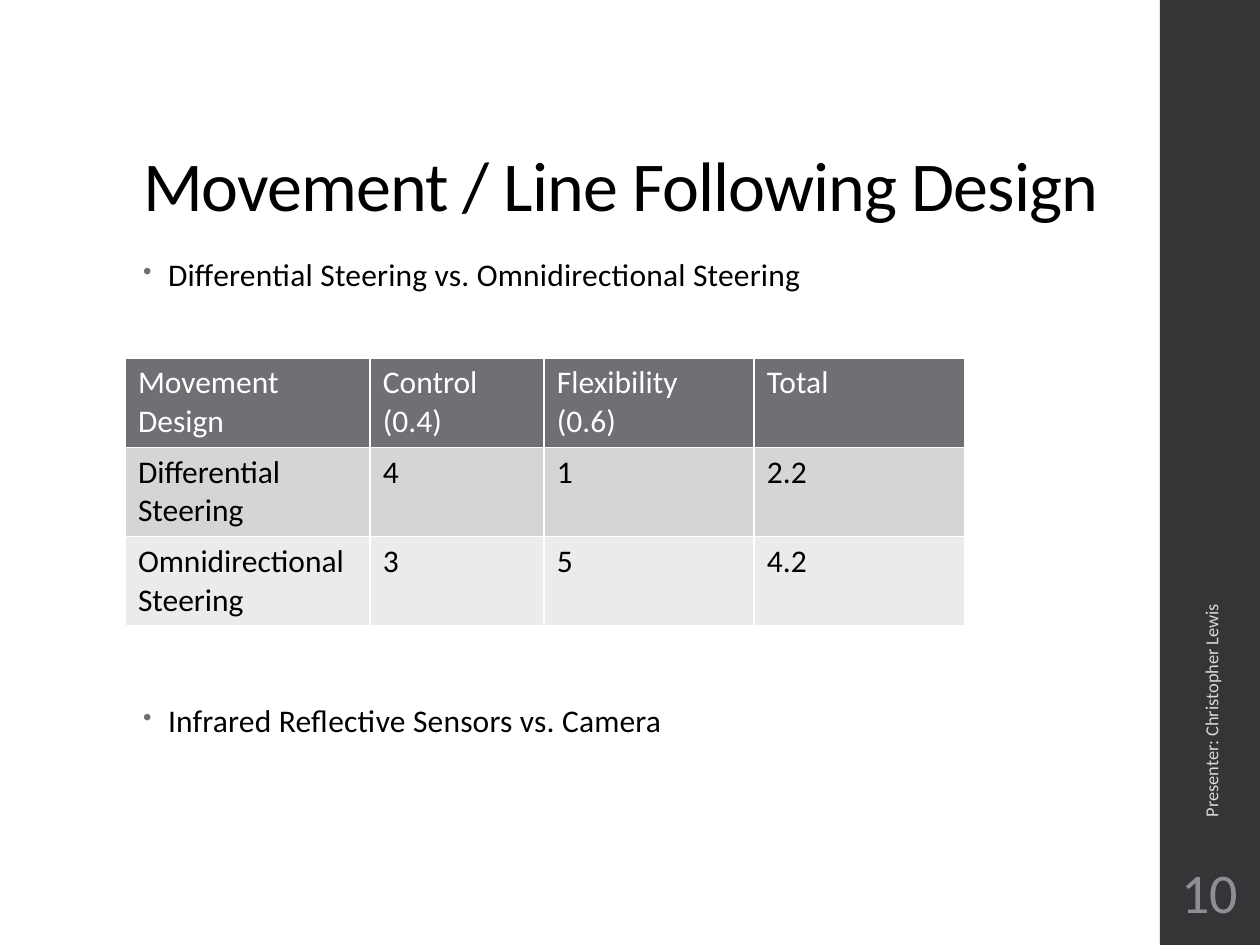
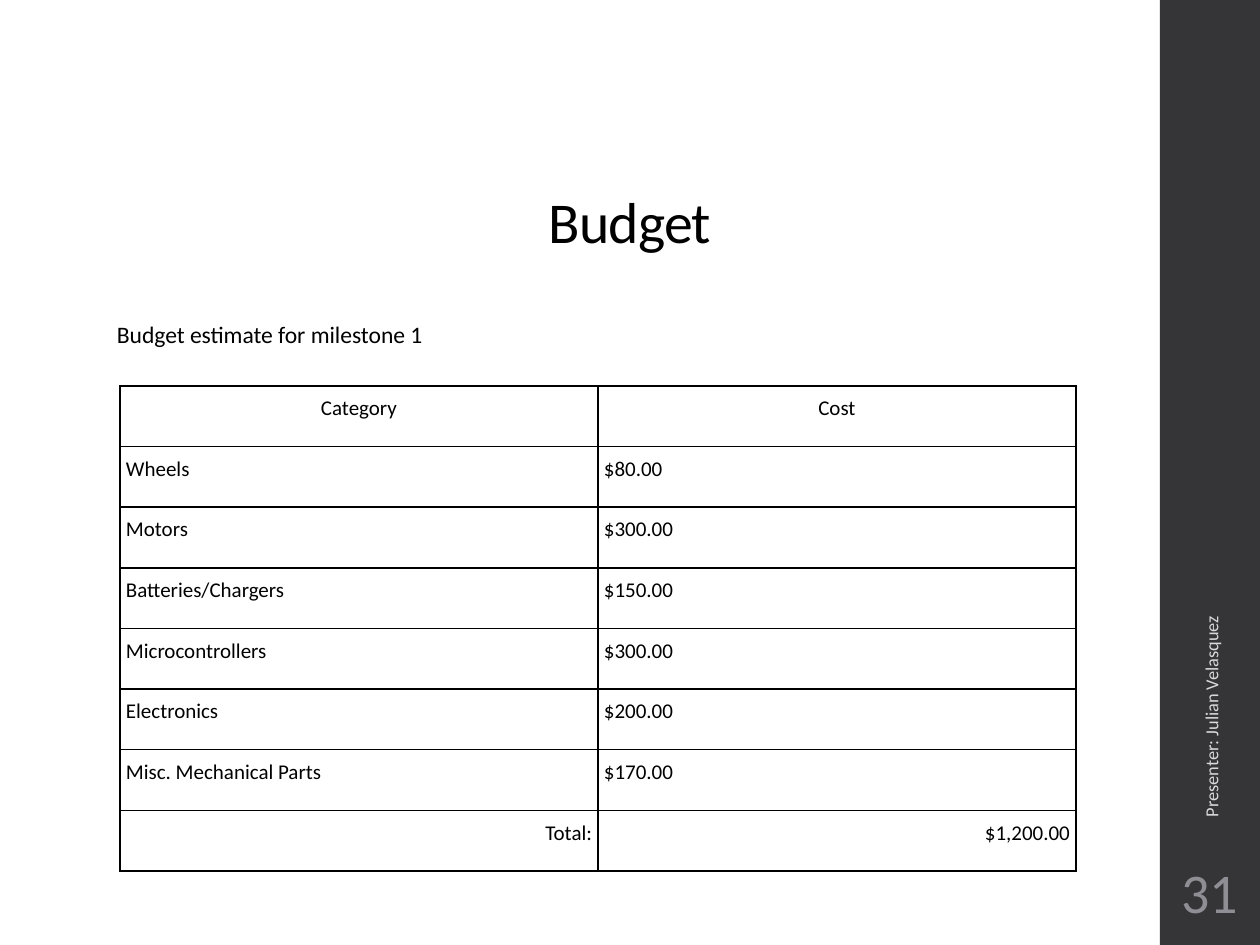
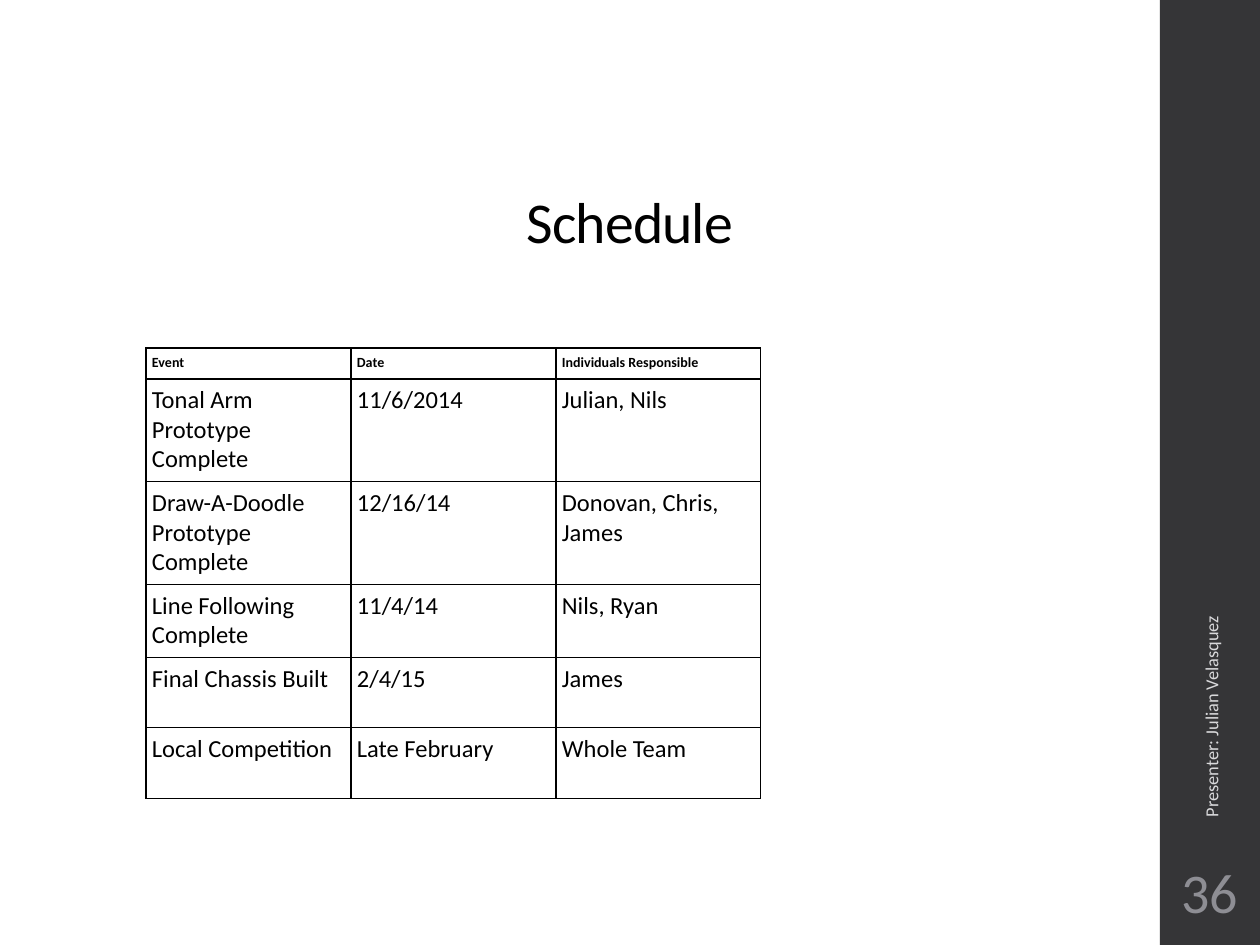
from lxml import etree
from pptx import Presentation
from pptx.dml.color import RGBColor
from pptx.enum import shapes, text
from pptx.oxml import ns
from pptx.util import Pt

SCALE = 914400 / 126
FONT = "Calibri"
BLACK = RGBColor(0x00, 0x00, 0x00)
WHITE = RGBColor(0xFF, 0xFF, 0xFF)
BAND = RGBColor(0x35, 0x35, 0x37)
GRAY = RGBColor(0x6F, 0x6F, 0x74)
DARK = RGBColor(0xD5, 0xD5, 0xD6)
LIGHT = RGBColor(0xEB, 0xEB, 0xEB)
PALE = RGBColor(0xD9, 0xD9, 0xDB)
NUMBER = RGBColor(0x8E, 0x8E, 0x94)
LEFT, CENTER, RIGHT = text.PP_ALIGN.LEFT, text.PP_ALIGN.CENTER, text.PP_ALIGN.RIGHT
TOP, MIDDLE, BOTTOM = text.MSO_ANCHOR.TOP, text.MSO_ANCHOR.MIDDLE, text.MSO_ANCHOR.BOTTOM


def px(n):
    return round(n * SCALE)


def inset(item, pads):
    item.margin_left, item.margin_top, item.margin_right, item.margin_bottom = map(px, pads)


def style(para, size, color, align=LEFT, line=None, bold=False, track=0):
    para.alignment = align
    para.line_spacing = line
    for run in para.runs:
        font = run.font
        font.name, font.size, font.bold = FONT, Pt(size), bold
        font.color.rgb = color
        if track:
            run._r.get_or_add_rPr().set("spc", str(track))


def write(slide, box, words, size, color, anchor=TOP, pads=(13, 6, 13, 6), **look):
    shape = slide.shapes.add_textbox(*map(px, box))
    frame = shape.text_frame
    frame.word_wrap = True
    frame.vertical_anchor = anchor
    inset(frame, pads)
    frame.text = words
    for para in frame.paragraphs:
        style(para, size, color, **look)
    return shape


def head(slide, box, words, size, anchor=MIDDLE, align=CENTER):
    write(slide, box, words, size, BLACK, anchor, pads=(9, 6, 9, 6) if align == CENTER else (13, 6, 13, 6),
          align=align, line=0.9, track=-50)


def side(slide, box, name, page):
    x, y, w, h = box
    band = slide.shapes.add_shape(shapes.MSO_SHAPE.RECTANGLE, *map(px, box))
    band.shadow.inherit = False
    band.fill.solid()
    band.fill.fore_color.rgb = BAND
    band.line.fill.background()
    foot = write(slide, (x - 196, y + 564, 494, 38), f"Presenter: {name}", 10.5, PALE, MIDDLE)
    foot.rotation = 270
    write(slide, (x + 3, y + 850, 94, 82), str(page), 32, NUMBER, MIDDLE,
          pads=(4, 6, 4, 6), align=CENTER)


def points(slide, box, items, gaps):
    shape = write(slide, box, "\n".join(items), 18, BLACK, line=0.95, track=10)
    for para, gap in zip(shape.text_frame.paragraphs, gaps):
        para.space_before, para.space_after = Pt(gap), Pt(2)
        props = para._p.get_or_add_pPr()
        props.set("marL", str(px(25)))
        props.set("indent", str(px(-25)))
        tint = etree.SubElement(props, ns.qn("a:buClr"))
        etree.SubElement(tint, ns.qn("a:srgbClr"), val=str(GRAY))
        etree.SubElement(props, ns.qn("a:buSzPct"), val="80000")
        etree.SubElement(props, ns.qn("a:buChar"), char="•")


def edge(cell, color, width):
    props = cell._tc.get_or_add_tcPr()
    for name in ("lnL", "lnR", "lnT", "lnB"):
        line = etree.SubElement(props, ns.qn(f"a:{name}"), w=str(Pt(width)))
        fill = etree.SubElement(line, ns.qn("a:solidFill"))
        etree.SubElement(fill, ns.qn("a:srgbClr"), val=str(color))


def grid(slide, box, data, look, rule, width, pads=(6, 6, 6, 6), cols=(), rows=()):
    table = slide.shapes.add_table(len(data), len(data[0]), *map(px, box)).table
    table.first_row = table.horz_banding = False
    for col, size in zip(table.columns, cols):
        col.width = px(size)
    for row, size in zip(table.rows, rows):
        row.height = px(size)
    for i, line in enumerate(data):
        fill, form = look(i)
        for j, words in enumerate(line):
            cell = table.cell(i, j)
            cell.text = words
            inset(cell, pads)
            edge(cell, rule, width)
            if fill is None:
                cell.fill.background()
            else:
                cell.fill.solid()
                cell.fill.fore_color.rgb = fill
            style(cell.text_frame.paragraphs[0], **form)


def design(slide, box):
    x, y, w, h = box
    head(slide, (x + 130, y + 50, 1002, 183), "Movement / Line Following Design", 40, BOTTOM, LEFT)
    points(slide, (x + 130, y + 252, 888, 600),
           ["Differential Steering vs. Omnidirectional Steering",
            "Infrared Reflective Sensors vs. Camera"], (14, 232))
    data = [("Movement Design", "Control (0.4)", "Flexibility (0.6)", "Total"),
            ("Differential Steering", "4", "1", "2.2"),
            ("Omnidirectional Steering", "3", "5", "4.2")]

    def look(i):
        return (GRAY, DARK, LIGHT)[i], dict(size=18, color=BLACK if i else WHITE)

    grid(slide, (x + 125, y + 358, 840, 268), data, look, WHITE, 1,
         pads=(13, 6, 13, 6), cols=(245, 174, 210, 211))


def budget(slide, box):
    x, y, w, h = box
    head(slide, (x + 87, y + 156, 1086, 137), "Budget", 33)
    data = [("Category", "Cost"), ("Wheels", "$80.00"), ("Motors", "$300.00"),
            ("Batteries/Chargers", "$150.00"), ("Microcontrollers", "$300.00"),
            ("Electronics", "$200.00"), ("Misc. Mechanical Parts", "$170.00"),
            ("Total:", "$1,200.00")]

    def look(i):
        align = {0: CENTER, len(data) - 1: RIGHT}.get(i, LEFT)
        return None, dict(size=12, color=BLACK, align=align, line=1.15)

    grid(slide, (x + 120, y + 386, 956, 485), data, look, BLACK, 1)
    write(slide, (x + 103, y + 315, 406, 38), "Budget estimate for milestone 1",
          13.5, BLACK, pads=(14, 5, 9, 5))


def plan(slide, box):
    x, y, w, h = box
    head(slide, (x + 87, y + 156, 1086, 137), "Schedule", 33)
    data = [("Event", "Date", "Individuals Responsible"),
            ("Tonal Arm Prototype Complete", "11/6/2014", "Julian, Nils"),
            ("Draw-A-Doodle Prototype Complete", "12/16/14", "Donovan, Chris, James"),
            ("Line Following Complete", "11/4/14", "Nils, Ryan"),
            ("Final Chassis Built", "2/4/15", "James"),
            ("Local Competition", "Late February", "Whole Team")]

    def look(i):
        return None, dict(size=14 if i else 8, color=BLACK, bold=i == 0)

    grid(slide, (x + 146, y + 348, 615, 451), data, look, BLACK, 0.75,
         rows=(31, 103, 103, 73, 70, 71))


def main():
    deck = Presentation()
    deck.slide_width, deck.slide_height = px(1260), px(945)
    pages = [(design, "Christopher Lewis", 10),
             (budget, "Julian Velasquez", 31),
             (plan, "Julian Velasquez", 36)]
    for build, name, page in pages:
        slide = deck.slides.add_slide(deck.slide_layouts[6])
        side(slide, (1160, 0, 100, 945), name, page)
        build(slide, (0, 0, 1160, 945))
    deck.save("out.pptx")


if __name__ == "__main__":
    main()
